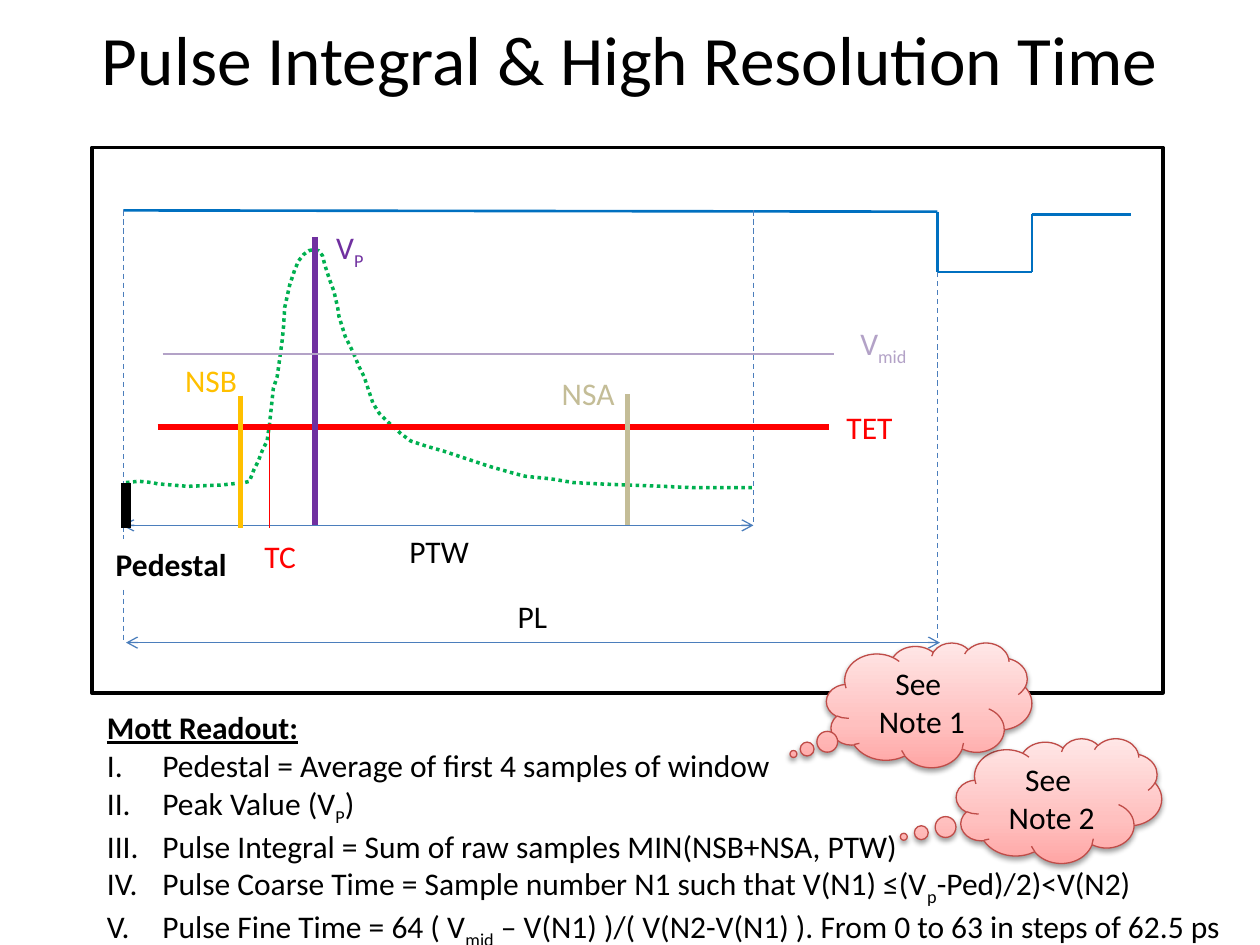
"""Build the slide on pulse integral and high resolution time."""
import copy

from lxml import etree
from pptx import Presentation
from pptx import util as u
from pptx.dml.color import RGBColor
from pptx.enum import dml, shapes, text
from pptx.oxml import ns

COLORS = {
    "black": "000000", "white": "FFFFFF", "signal": "0070C0", "guide": "4B7EBC",
    "pulse": "00B050", "red": "FF0000", "before": "FFC000", "after": "C4BD97",
    "peak": "7030A0", "mid": "B3A2C7", "cloud_edge": "BF4C48",
    "cloud_dark": "FFA6A5", "cloud_mid": "FFC0BF", "cloud_light": "FFE7E7",
}
CLOUD_STOPS = [(0, "cloud_dark"), (0.35, "cloud_mid"), (1, "cloud_light")]
DASH = dml.MSO_LINE.DASH
DOT = dml.MSO_LINE.ROUND_DOT

PULSE = [
    (1, 3.83), (1.1, 3.82), (1.21, 3.83), (1.25, 3.84), (1.49, 3.86), (1.75, 3.85),
    (1.94, 3.83), (1.98, 3.82), (2.01, 3.74), (2.05, 3.66), (2.08, 3.58), (2.12, 3.5),
    (2.14, 3.36), (2.17, 3.08), (2.2, 2.99), (2.21, 2.92), (2.24, 2.7), (2.25, 2.6),
    (2.26, 2.44), (2.3, 2.26), (2.34, 2.14), (2.37, 2.07), (2.41, 2.02), (2.45, 1.99),
    (2.49, 1.98), (2.53, 1.99), (2.56, 2.03), (2.58, 2.11), (2.62, 2.23), (2.65, 2.31),
    (2.68, 2.44), (2.69, 2.51), (2.74, 2.67), (2.8, 2.79), (2.85, 2.91), (2.89, 2.99),
    (2.93, 3.11), (2.96, 3.2), (3.01, 3.28), (3.08, 3.35), (3.18, 3.44), (3.26, 3.5),
    (3.38, 3.54), (3.52, 3.58), (3.88, 3.7), (4.09, 3.76), (4.17, 3.78), (4.37, 3.8),
    (4.55, 3.83), (4.74, 3.84), (5.26, 3.86), (5.5, 3.87), (5.98, 3.87),
]
READOUT = [
    ["Pedestal = Average of first 4 samples of window"],
    ["Peak Value (V", "P", ")"],
    ["Pulse Integral = Sum of raw samples MIN(NSB+NSA, PTW)"],
    ["Pulse Coarse Time = Sample number N1 such that V(N1) ≤(V", "p", "-Ped)/2)<V(N2)"],
    ["Pulse Fine Time = 64 ( V", "mid",
     " – V(N1) )/( V(N2-V(N1) ). From 0 to 63 in steps of 62.5 ps"],
]


class Diagram:
    """Hold the style and the current slide."""

    def __init__(self, slide):
        self.slide = slide
        self.style = {"name": "Calibri", "size": u.Pt(18)}

    def color(self, name):
        return RGBColor.from_string(COLORS[name])

    def child(self, parent, tag, **values):
        node = etree.SubElement(parent, ns.qn(tag))
        for key, value in values.items():
            node.set(key, str(value))
        return node

    def stroke(self, line, color, width, dash=None):
        line.color.rgb = self.color(color)
        formats = {"width": u.Pt(width), "dash_style": dash}
        for key, value in formats.items():
            setattr(line, key, value)

    def add_words(self, paragraph, parts, color="black", **formats):
        """Add the parts, with every second one as a subscript."""
        for index, part in enumerate(parts):
            run = paragraph.add_run()
            run.text = part
            for key, value in {**self.style, **formats}.items():
                setattr(run.font, key, value)
            run.font.color.rgb = self.color(color)
            if index % 2:
                run.font._element.set("baseline", "-25000")

    def label(self, place, parts, color="black", fill=None, wrap=False, **formats):
        box = self.slide.shapes.add_textbox(*map(u.Inches, place))
        box.text_frame.word_wrap = wrap
        if fill:
            box.fill.solid()
            box.fill.fore_color.rgb = self.color(fill)
        self.add_words(box.text_frame.paragraphs[0], parts, color, **formats)
        return box.text_frame

    def line(self, start, end, color, width, dash=None, arrows=False):
        connector = self.slide.shapes.add_connector(
            shapes.MSO_CONNECTOR.STRAIGHT, *map(u.Inches, start + end))
        self.stroke(connector.line, color, width, dash)
        properties = connector._element.spPr
        if arrows:
            for tag in ("a:headEnd", "a:tailEnd"):
                self.child(properties.find(ns.qn("a:ln")), tag, type="arrow")
        self.child(properties, "a:effectLst")

    def frame(self, place):
        frame = self.slide.shapes.add_shape(
            shapes.MSO_SHAPE.RECTANGLE, *map(u.Inches, place))
        frame.shadow.inherit = False
        frame.fill.background()
        self.stroke(frame.line, "black", 2)

    def curve(self, points):
        start, *rest = [tuple(map(u.Inches, point)) for point in points]
        builder = self.slide.shapes.build_freeform(*start)
        builder.add_line_segments(rest, close=False)
        curve = builder.convert_to_shape()
        curve.shadow.inherit = False
        curve.fill.background()
        self.stroke(curve.line, "pulse", 2, DOT)

    def cloud(self, place, tip, note):
        cloud = self.slide.shapes.add_shape(
            shapes.MSO_SHAPE.CLOUD_CALLOUT, *map(u.Inches, place))
        for index, value in enumerate(tip):
            cloud.adjustments[index] = value
        cloud.fill.gradient()
        cloud.fill.gradient_angle = 90
        stop_list = cloud._element.xpath(".//a:gsLst")[0]
        stop_list.append(copy.deepcopy(stop_list[0]))
        for stop, (position, color) in zip(cloud.fill.gradient_stops, CLOUD_STOPS):
            stop.position = position
            stop.color.rgb = self.color(color)
        self.stroke(cloud.line, "cloud_edge", 0.75)
        cloud.shadow.inherit = False
        shadow = self.child(
            cloud._element.spPr.find(ns.qn("a:effectLst")), "a:outerShdw",
            blurRad=u.Pt(3.1), dist=u.Pt(1.6), dir=5400000, rotWithShape=0)
        shade = self.child(shadow, "a:srgbClr", val=COLORS["black"])
        self.child(shade, "a:alpha", val=38000)
        frame = cloud.text_frame
        frame.vertical_anchor = text.MSO_ANCHOR.MIDDLE
        for paragraph, words in zip(
                (frame.paragraphs[0], frame.add_paragraph()), ("See ", note)):
            paragraph.alignment = text.PP_ALIGN.CENTER
            self.add_words(paragraph, [words])

    def numbered(self, frame, items):
        for parts in items:
            paragraph = frame.add_paragraph()
            properties = paragraph._p.get_or_add_pPr()
            properties.set("marL", str(u.Inches(0.44)))
            properties.set("indent", str(u.Inches(-0.44)))
            self.child(properties, "a:buFont", typeface="+mj-lt")
            self.child(properties, "a:buAutoNum", type="romanUcPeriod")
            self.add_words(paragraph, parts)


def main():
    deck = Presentation()
    deck.slide_width, deck.slide_height = u.Inches(10), u.Inches(7.5)
    diagram = Diagram(deck.slides.add_slide(deck.slide_layouts[6]))

    title = diagram.label((0.5, 0, 9, 0.92), ["Pulse Integral & High Resolution Time"],
                          wrap=True, size=u.Pt(39.6))
    title.vertical_anchor = text.MSO_ANCHOR.MIDDLE
    title.paragraphs[0].alignment = text.PP_ALIGN.CENTER
    diagram.frame((0.73, 1.17, 8.5, 4.33))

    trigger = [(0.98, 1.67), (7.44, 1.68), (7.44, 2.16), (8.19, 2.16),
               (8.19, 1.7), (8.98, 1.7)]
    for start, end in zip(trigger, trigger[1:]):
        diagram.line(start, end, "signal", 1.5)
    for x, top, bottom in [(7.44, 2.16, 5.09), (0.98, 1.67, 5.09), (5.98, 1.67, 4.17)]:
        diagram.line((x, top), (x, bottom), "guide", 0.75, DASH)
    diagram.curve(PULSE)
    for left, right, y in [(1, 7.46, 5.1), (0.97, 5.98, 4.17)]:
        diagram.line((left, y), (right, y), "guide", 0.75, arrows=True)

    readout = diagram.label((0.75, 5.57, 9.16, 1.92), ["Mott Readout:"],
                            wrap=True, bold=True, underline=True)
    diagram.numbered(readout, READOUT)

    for start, end, color, width in [
        ((1.25, 3.39), (6.58, 3.39), "red", 3),
        ((1.91, 3.14), (1.91, 4.19), "before", 3),
        ((4.98, 3.13), (4.98, 4.17), "after", 3),
        ((2.14, 4.19), (2.14, 3.36), "red", 1),
        ((2.5, 1.88), (2.5, 4.17), "peak", 3),
        ((1, 3.83), (1, 4.19), "black", 6),
        ((1.29, 2.81), (6.62, 2.81), "mid", 0.75),
    ]:
        diagram.line(start, end, color, width)

    for left, top, width, parts, color in [
        (4.01, 4.69, 0.44, ["PL"], "black"),
        (3.15, 4.17, 0.68, ["PTW"], "black"),
        (6.62, 3.19, 0.57, ["TET"], "red"),
        (1.37, 2.82, 0.62, ["NSB"], "before"),
        (4.36, 2.92, 0.62, ["NSA"], "after"),
        (2.57, 1.76, 0.43, ["V", "P"], "peak"),
        (2, 4.21, 0.45, ["TC"], "red"),
        (6.73, 2.52, 0.6, ["V", "mid"], "mid"),
    ]:
        diagram.label((left, top, width, 0.4), parts, color)
    diagram.label((0.82, 4.28, 1.09, 0.4), ["Pedestal"], fill="white", bold=True)

    diagram.cloud((7.59, 5.86, 1.63, 0.99), (-0.756, 0.289), "Note 2")
    diagram.cloud((6.56, 5.1, 1.63, 0.99), (-0.661, 0.393), "Note 1")
    deck.save("out.pptx")


if __name__ == "__main__":
    main()
